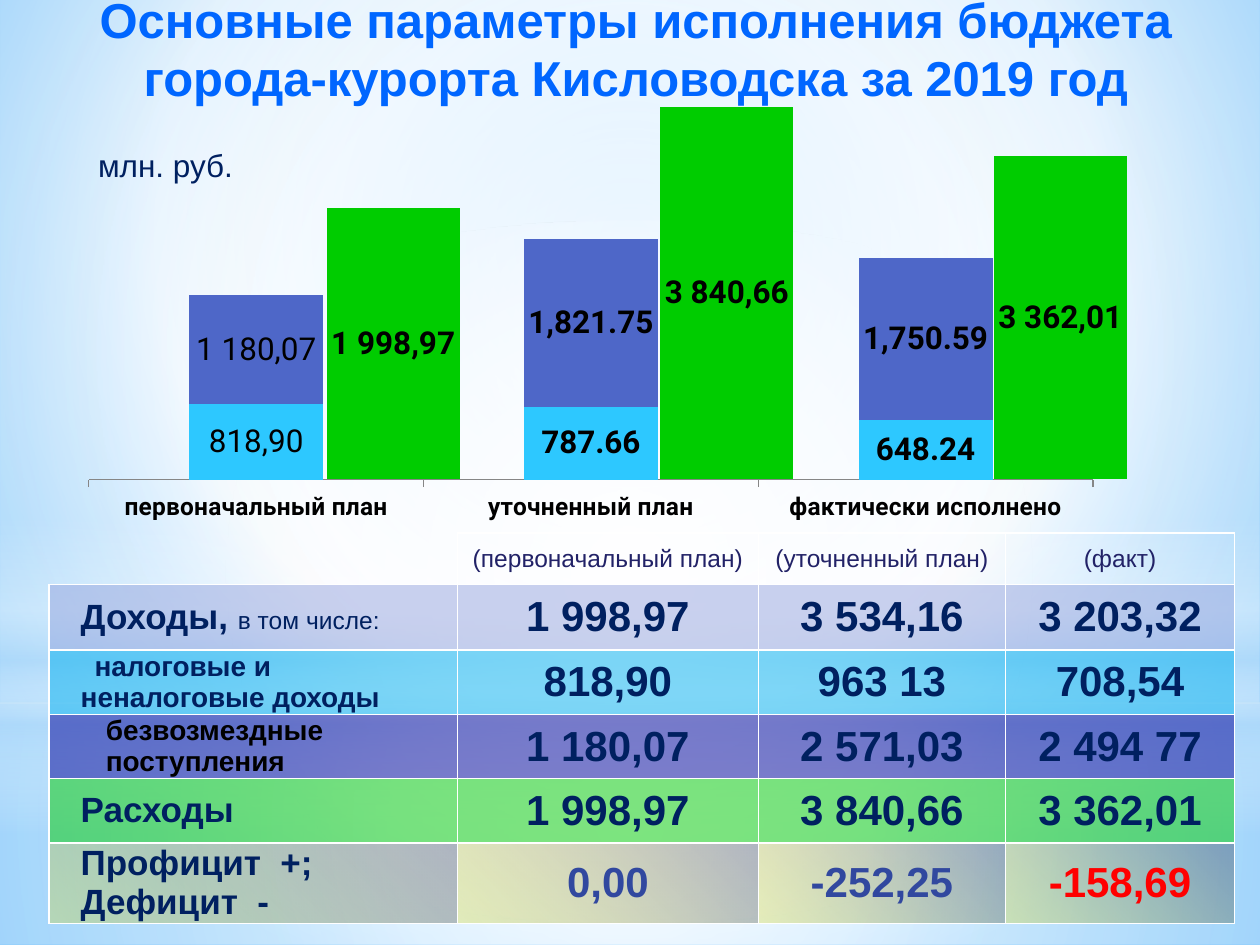
from lxml import etree
from pptx import Presentation
from pptx.chart.data import CategoryChartData
from pptx.dml.color import RGBColor
from pptx.enum.chart import XL_CHART_TYPE, XL_LABEL_POSITION, XL_TICK_LABEL_POSITION, XL_TICK_MARK
from pptx.enum.shapes import MSO_SHAPE
from pptx.enum.text import MSO_ANCHOR, MSO_AUTO_SIZE, PP_ALIGN
from pptx.oxml import parse_xml
from pptx.oxml.ns import nsdecls, qn
from pptx.util import Inches, Pt

COLORS = {
    "title": "0066FF", "navy": "002060", "header": "222267", "black": "000000",
    "white": "FFFFFF", "mist": "B4DCFA", "sky": "9ED5FF", "azure": "5BB9FF",
    "expenses": "00CC00", "own": "2DC8FF", "grants": "4E67C8", "rest": "A7EA52",
    "income_row": "95A4DE", "own_row": "00B0F0", "grants_row": "000099",
    "yellow": "D6D600", "ink": "1E233E", "balance": "31489F", "deficit": "FF0000",
    "axis": "868686",
}


def gradient(fill, props, stops, angle=None, focus=(50, 50, 50, 50)):
    fill.solid()
    marks = "".join(
        f'<a:gs pos="{pos * 1000}"><a:srgbClr val="{COLORS[color]}">'
        f'<a:alpha val="{alpha * 1000}"/></a:srgbClr></a:gs>'
        for pos, color, alpha in stops)
    if angle is None:
        sides = " ".join(f'{side}="{share * 1000}"' for side, share in zip("ltrb", focus))
        shade = f'<a:path path="circle"><a:fillToRect {sides}/></a:path>'
    else:
        shade = f'<a:lin ang="{angle * 60000}" scaled="0"/>'
    blend = parse_xml(f'<a:gradFill {nsdecls("a")} rotWithShape="1">'
                      f'<a:gsLst>{marks}</a:gsLst>{shade}</a:gradFill>')
    props.replace(props.find(qn("a:solidFill")), blend)


def style(font, color, **values):
    font.color.rgb = RGBColor.from_string(COLORS[color])
    for key, value in values.items():
        setattr(font, key, value)


prs = Presentation()
prs.slide_width, prs.slide_height = Inches(10), Inches(7.5)
slide = prs.slides.add_slide(prs.slide_layouts[5])
shapes = slide.shapes
backdrop = slide.background.fill
backdrop.solid()
gradient(backdrop, slide.element.find(".//" + qn("p:bgPr")),
         [(0, "sky", 100), (60, "white", 100), (100, "azure", 100)], focus=(20, 10, 20, 60))

glows = [
    (MSO_SHAPE.RECTANGLE, 5.58, 1.92, None,
     [(0, "white", 91), (37, "white", 76), (100, "mist", 79)]),
    (MSO_SHAPE.RECTANGLE, 0, 5.58, None,
     [(0, "white", 89), (48, "white", 62), (100, "mist", 79)]),
    (MSO_SHAPE.RECTANGLE, 4.12, 2.5, 90,
     [(0, "white", 0), (29, "white", 30), (45, "mist", 40), (55, "white", 26),
      (65, "mist", 60), (100, "white", 0)]),
    (MSO_SHAPE.OVAL, 1.75, 5.58, None, [(0, "white", 100), (56, "white", 0)]),
]
for outline, top, height, angle, stops in glows:
    glow = shapes.add_shape(outline, 0, Inches(top), Inches(10), Inches(height))
    glow.shadow.inherit = False
    glow.line.fill.background()
    gradient(glow.fill, glow.element.spPr, stops, angle)

title = shapes.title
title.left, title.top, title.width, title.height = map(Inches, (0.29, -0.14, 9.51, 1.04))
heading = title.text_frame
heading.text = "Основные параметры исполнения бюджета города-курорта Кисловодска за 2019 год"
heading.auto_size = MSO_AUTO_SIZE.NONE
heading.vertical_anchor = MSO_ANCHOR.MIDDLE
heading.paragraphs[0].alignment = PP_ALIGN.CENTER
style(heading.paragraphs[0].runs[0].font, "title", name="Arial", size=Pt(28), bold=True)

charts = [
    {"at": (1.66, 0.3, 8.08, 3.68), "plot": (0.017, 0.047, 0.983, 0.906), "axis": False,
     "categories": ["1", "2", "3"], "label_bold": True,
     "series": [("expenses", (1935.76, 2662.38, 2309.05), ["1 998,97", "3 840,66", "3 362,01"])]},
    {"at": (0.7, 1.12, 7.98, 4.45), "plot": (0, 0.11, 1, 0.494), "axis": True,
     "categories": ["первоначальный план", "уточненный план", "фактически исполнено"],
     "label_bold": False,
     "series": [("own", (818.9, 787.66, 648.24), ["818,90"]),
                ("grants", (1180.07, 1821.75, 1750.59), ["1 180,07"]),
                ("rest", (0, 0, 0), [])]},
]
chart_frames = []
for item in charts:
    data = CategoryChartData()
    data.categories = item["categories"]
    for number, (_, values, _) in enumerate(item["series"], 1):
        data.add_series(f"Series {number}", values)
    frame = shapes.add_chart(XL_CHART_TYPE.COLUMN_STACKED, *map(Inches, item["at"]), data)
    chart_frames.append(frame)
    chart = frame.chart
    chart.has_legend = chart.has_title = False
    style(chart.font, "black", name="Roboto", size=Pt(18))

    area = chart.element.find(".//" + qn("c:plotArea"))
    for layout in area.findall(qn("c:layout")):
        area.remove(layout)
    manual = etree.SubElement(etree.Element(qn("c:layout")), qn("c:manualLayout"))
    area.insert(0, manual.getparent())
    settings = [("layoutTarget", "inner"), ("xMode", "edge"), ("yMode", "edge"),
                *zip("xywh", item["plot"])]
    for tag, value in settings:
        etree.SubElement(manual, qn(f"c:{tag}")).set("val", str(value))

    scale, names = chart.value_axis, chart.category_axis
    scale.minimum_scale, scale.maximum_scale = 0, 3000
    scale.has_major_gridlines = scale.visible = False
    names.visible = item["axis"]
    names.major_tick_mark = XL_TICK_MARK.OUTSIDE
    names.tick_label_position = XL_TICK_LABEL_POSITION.LOW
    names.format.line.color.rgb = RGBColor.from_string(COLORS["axis"])
    style(names.tick_labels.font, "black", name="Roboto", size=Pt(14), bold=True)

    plot = chart.plots[0]
    plot.gap_width, plot.overlap, plot.vary_by_categories = 150, 100, False
    for series, (color, values, captions) in zip(plot.series, item["series"]):
        series.format.fill.solid()
        series.format.fill.fore_color.rgb = RGBColor.from_string(COLORS[color])
        if not captions:
            continue
        labels = series.data_labels
        labels.show_value = True
        labels.number_format, labels.number_format_is_linked = "#,##0.00", False
        labels.position = XL_LABEL_POSITION.CENTER
        style(labels.font, "black", name="Roboto", size=Pt(18), bold=True)
        for index, caption in enumerate(captions):
            label = series.points[index].data_label
            label.text_frame.text = caption
            style(label.text_frame.paragraphs[0].runs[0].font, "black",
                  name="Roboto", size=Pt(18), bold=item["label_bold"])

tint = {key: [(0, key, 50), (100, key, 50)]
        for key in ("income_row", "own_row", "grants_row", "expenses")}
balance_tint = [(0, "yellow", 27), (100, "ink", 32)]
rows = [
    (0.41, None, 0, 0, [], ["(первоначальный план)", "(уточненный план)", "(факт)"]),
    (0.52, tint["income_row"], 0.19, 0,
     [("Доходы, ", 20, True, "navy"), ("в том числе:", 14, False, "navy")],
     ["1 998,97", "3 534,16", "3 203,32"]),
    (0.51, tint["own_row"], 0.19, 0.11,
     [("налоговые и неналоговые доходы", 16, True, "navy")], ["818,90", "963 13", "708,54"]),
    (0.51, tint["grants_row"], 0.39, 0,
     [("безвозмездные поступления", 16, True, "black")], ["1 180,07", "2 571,03", "2 494 77"]),
    (0.51, tint["expenses"], 0.19, 0,
     [("Расходы", 20, True, "navy")], ["1 998,97", "3 840,66", "3 362,01"]),
    (0.64, balance_tint, 0.19, 0,
     [("Профицит  +; Дефицит  -", 20, True, "navy")], ["0,00", "-252,25", "-158,69"]),
]
value_colors = {"0,00": "balance", "-252,25": "balance", "-158,69": "deficit"}
table_frame = shapes.add_table(len(rows), 4, *map(Inches, (0.39, 4.23, 9.41, 3.1)))
table = table_frame.table
table.first_row = table.horz_banding = False
for column, width in zip(table.columns, (3.24, 2.39, 1.96, 1.82)):
    column.width = Inches(width)
for r, (height, stops, margin, first_line, label, values) in enumerate(rows):
    table.rows[r].height = Inches(height)
    head = r == 0
    value_runs = [[(value, 14 if head else 24, not head,
                    "header" if head else value_colors.get(value, "navy"))] for value in values]
    for c, runs in enumerate([label, *value_runs]):
        cell = table.cell(r, c)
        cell.margin_left = cell.margin_right = Inches(0.06)
        cell.margin_top = cell.margin_bottom = 0
        cell.vertical_anchor = MSO_ANCHOR.MIDDLE
        props = cell._tc.get_or_add_tcPr()
        for side in "LRTB":
            bare = head and c == 0 and side in "LT"
            paint = "<a:noFill/>" if bare else (
                f'<a:solidFill><a:srgbClr val="{COLORS["white"]}"/></a:solidFill>')
            props.append(parse_xml(f'<a:ln{side} {nsdecls("a")} w="{Pt(1)}">{paint}</a:ln{side}>'))
        if stops:
            gradient(cell.fill, props, stops, 315)
        else:
            cell.fill.background()
        paragraph = cell.text_frame.paragraphs[0]
        if c:
            paragraph.alignment = PP_ALIGN.CENTER
        else:
            indents = paragraph._p.get_or_add_pPr()
            indents.set("marL", str(Inches(margin)))
            indents.set("indent", str(Inches(first_line)))
        for text, size, bold, color in runs:
            run = paragraph.add_run()
            run.text = text
            style(run.font, color, name="Arial", size=Pt(size), bold=bold)

for layer in (title, table_frame, chart_frames[1]):
    shapes.element.append(layer.element)

units = shapes.add_textbox(*map(Inches, (0.68, 1.11, 1.7, 0.4))).text_frame
units.word_wrap = True
units.text = "млн. руб."
style(units.paragraphs[0].runs[0].font, "navy", name="Arial", size=Pt(18))

prs.save("out.pptx")
